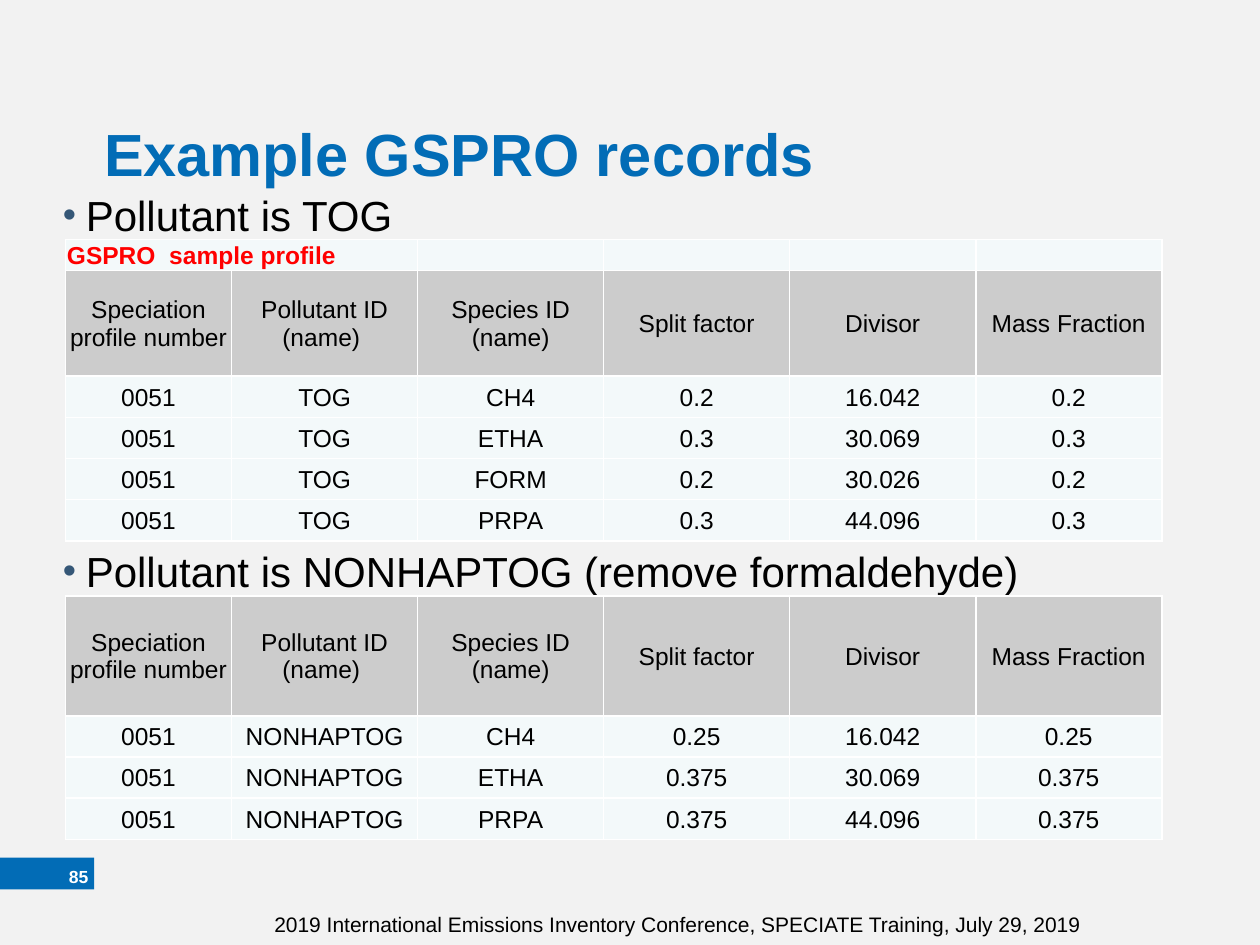
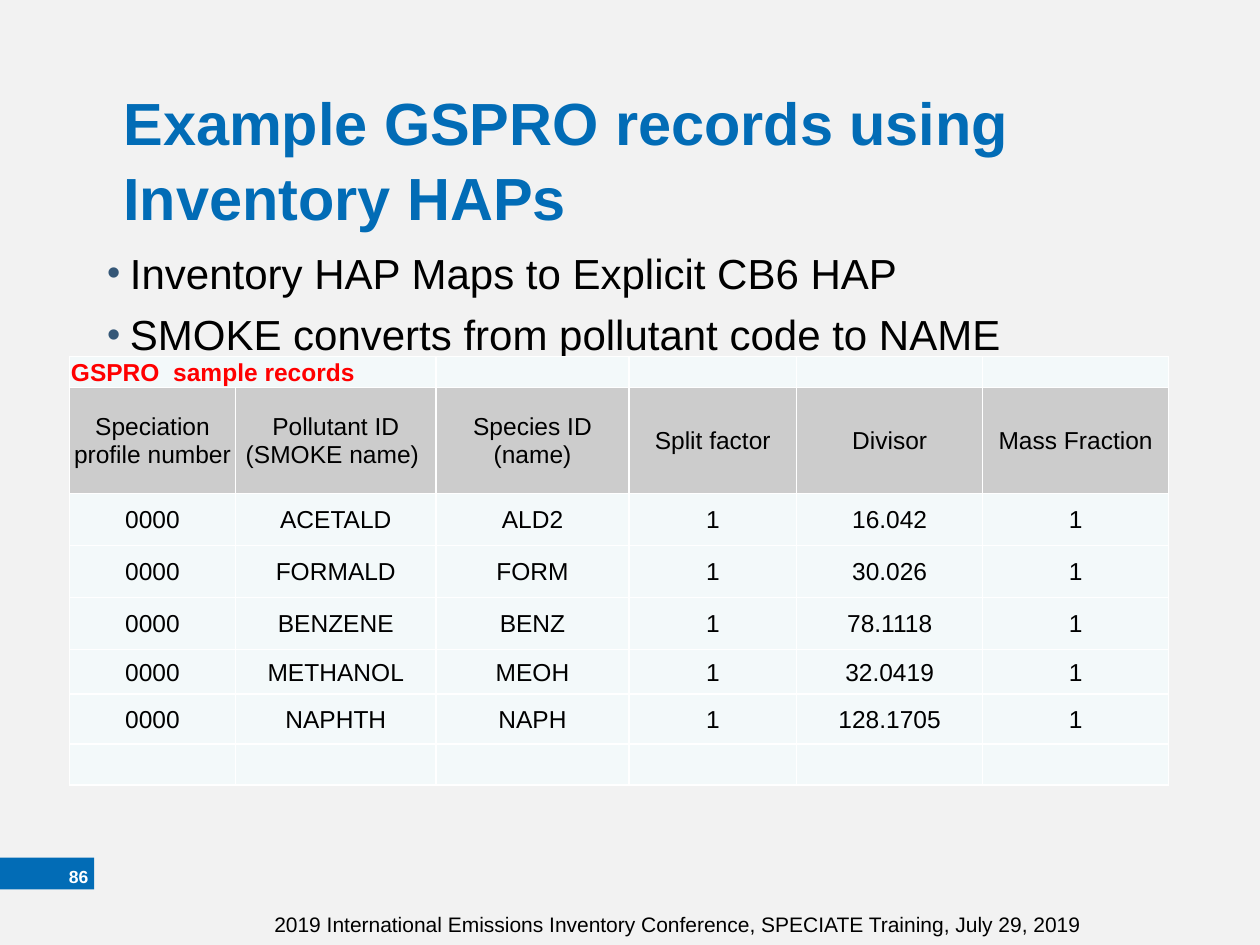
from pptx import Presentation
from pptx.dml.color import RGBColor
from pptx.enum.shapes import MSO_SHAPE as Shape
from pptx.enum.text import MSO_ANCHOR as Anchor, PP_ALIGN as Align
from pptx.oxml import parse_xml
from pptx.oxml.ns import nsdecls
from pptx.util import Cm, Pt

FONT = "Arial"
COLORS = {
    "background": "F2F2F2",
    "blue": "026CB6",
    "bullet": "355777",
    "black": "000000",
    "white": "FFFFFF",
    "red": "FF0000",
    "header": "CCCCCC",
    "body": "F3F9FA",
}
FOOTER = "2019 International Emissions Inventory Conference, SPECIATE Training, July 29, 2019"

HEADER = ["Speciation profile number", "Pollutant ID (name) ", "Species ID (name)",
          "Split factor", "Divisor", "Mass Fraction"]
SMOKE_HEADER = [HEADER[0], "Pollutant ID (SMOKE name) ", *HEADER[2:]]
EVEN_COLUMNS = [3.35] + [3.75] * 5

SLIDES = [
    {
        "number": "85",
        "title": "Example GSPRO records",
        "title_at": (1.85, 2.08),
        "bullets": ["Pollutant is TOG", "Pollutant is NONHAPTOG (remove formaldehyde)"],
        "bullets_box": (1.02, 3.61, 22.86, 12.57),
        "bullet_gap": 173,
        "tables": [
            {
                "at": (1.32, 4.83),
                "caption": "GSPRO  sample profile",
                "header": HEADER,
                "records": [
                    ["0051", "TOG", "CH4", "0.2", "16.042", "0.2"],
                    ["0051", "TOG", "ETHA", "0.3", "30.069", "0.3"],
                    ["0051", "TOG", "FORM", "0.2", "30.026", "0.2"],
                    ["0051", "TOG", "PRPA", "0.3", "44.096", "0.3"],
                ],
                "columns": EVEN_COLUMNS,
                "heights": [0.6, 2.13] + [0.83] * 4,
            },
            {
                "at": (1.32, 12.01),
                "caption": None,
                "header": HEADER,
                "records": [
                    ["0051", "NONHAPTOG", "CH4", "0.25", "16.042", "0.25"],
                    ["0051", "NONHAPTOG", "ETHA", "0.375", "30.069", "0.375"],
                    ["0051", "NONHAPTOG", "PRPA", "0.375", "44.096", "0.375"],
                ],
                "columns": EVEN_COLUMNS,
                "heights": [2.42] + [0.83] * 3,
            },
        ],
    },
    {
        "number": "86",
        "title": "Example GSPRO records using Inventory HAPs",
        "title_at": (2.24, 1.47),
        "bullets": ["Inventory HAP Maps to Explicit CB6 HAP",
                    "SMOKE converts from pollutant code to NAME"],
        "bullets_box": (1.91, 4.78, 21.59, 9.53),
        "bullet_gap": 4.8,
        "tables": [
            {
                "at": (1.4, 7.19),
                "caption": "GSPRO  sample records",
                "header": SMOKE_HEADER,
                "records": [
                    ["0000", "ACETALD", "ALD2", "1", "16.042", "1"],
                    ["0000", "FORMALD", "FORM", "1", "30.026", "1"],
                    ["0000", "BENZENE", "BENZ", "1", "78.1118", "1"],
                    ["0000", "METHANOL", "MEOH", "1", "32.0419", "1"],
                    ["0000", "NAPHTH", "NAPH", "1", "128.1705", "1"],
                    [""] * 6,
                ],
                "columns": [3.35, 4.04, 3.89, 3.38, 3.75, 3.75],
                "heights": [0.6, 2.13, 1.05, 1.05, 1.05, 0.9, 1.0, 0.83],
            },
        ],
    },
]


def color(name):
    return RGBColor.from_string(COLORS[name])


def write(paragraph, text, size=14, ink="black", bold=False, align=Align.LEFT,
          spacing=1.0, before=0, bullet=False):
    if bullet:
        properties = paragraph._p.get_or_add_pPr()
        properties.set("marL", str(Cm(0.46)))
        properties.set("indent", str(-Cm(0.46)))
        for element in (f'<a:buClr {nsdecls("a")}><a:srgbClr val="{COLORS["bullet"]}"/></a:buClr>',
                        f'<a:buSzPct {nsdecls("a")} val="90000"/>',
                        f'<a:buFont {nsdecls("a")} typeface="{FONT}"/>',
                        f'<a:buChar {nsdecls("a")} char="•"/>'):
            properties.append(parse_xml(element))
    paragraph.alignment = align
    paragraph.line_spacing = spacing
    if before:
        paragraph.space_before = Pt(before)
    if not text:
        paragraph._p.get_or_add_endParaRPr().set("sz", str(size * 100))
        return
    run = paragraph.add_run()
    run.text = text
    run.font.name = FONT
    run.font.size = Pt(size)
    run.font.bold = bold
    run.font.color.rgb = color(ink)


def add_frame(slide, box, margins=(0.25, 0.13), anchor=Anchor.TOP):
    frame = slide.shapes.add_textbox(*map(Cm, box)).text_frame
    frame.word_wrap = True
    frame.vertical_anchor = anchor
    frame.margin_left = frame.margin_right = Cm(margins[0])
    frame.margin_top = frame.margin_bottom = Cm(margins[1])
    return frame


def add_band(slide, box, fill):
    band = slide.shapes.add_shape(Shape.RECTANGLE, *map(Cm, box))
    band.shadow.inherit = False
    band.fill.solid()
    band.fill.fore_color.rgb = color(fill)
    band.line.fill.background()


def format_cell(cell, fill):
    cell.vertical_anchor = Anchor.MIDDLE
    cell.margin_left = cell.margin_right = cell.margin_top = Cm(0.03)
    cell.margin_bottom = 0
    cell.fill.solid()
    cell.fill.fore_color.rgb = color(fill)
    properties = cell._tc.get_or_add_tcPr()
    for position, side in enumerate("LRTB"):
        properties.insert(position, parse_xml(
            f'<a:ln{side} {nsdecls("a")} w="{Pt(1)}"><a:solidFill>'
            f'<a:srgbClr val="{COLORS["white"]}"/></a:solidFill></a:ln{side}>'))


def add_records(slide, data):
    columns, heights, caption = data["columns"], data["heights"], data["caption"]
    rows = [data["header"], *data["records"]]
    if caption:
        rows.insert(0, [caption] + [""] * (len(columns) - 1))
    box = (*data["at"], sum(columns), sum(heights))
    table = slide.shapes.add_table(len(rows), len(columns), *map(Cm, box)).table
    table.first_row = table.horz_banding = False
    for column, width in zip(table.columns, columns):
        column.width = Cm(width)
    for row, height in zip(table.rows, heights):
        row.height = Cm(height)
    for row, texts in zip(table.rows, rows):
        for cell, text in zip(row.cells, texts):
            format_cell(cell, "header" if texts is data["header"] else "body")
            style = {"ink": "red", "bold": True} if caption and text == caption else {"align": Align.CENTER}
            write(cell.text_frame.paragraphs[0], text, **style)
    if caption:
        table.cell(0, 0).merge(table.cell(0, 1))


def build_slide(presentation, content):
    slide = presentation.slides.add_slide(presentation.slide_layouts[6])
    add_band(slide, (0, 0, 25.4, 19.05), "background")
    add_band(slide, (0, 17.29, 1.9, 0.64), "blue")

    title = add_frame(slide, (*content["title_at"], 21.16, 2.74), margins=(0.25, 0.2))
    write(title.paragraphs[0], content["title"], size=34, ink="blue", bold=True, spacing=1.05)

    body = add_frame(slide, content["bullets_box"], margins=(0.25, 0.16))
    for index, text in enumerate(content["bullets"]):
        paragraph = body.add_paragraph() if index else body.paragraphs[0]
        write(paragraph, text, size=24, spacing=1.05, bullet=True,
              before=content["bullet_gap"] if index else 0)

    footer = add_frame(slide, (5.28, 18.24, 17.15, 0.8))
    write(footer.paragraphs[0], FOOTER, size=12)
    number = add_frame(slide, (0.08, 17.35, 1.7, 0.64), margins=(0, 0), anchor=Anchor.MIDDLE)
    write(number.paragraphs[0], content["number"], size=10, ink="white", bold=True, align=Align.RIGHT)

    for data in content["tables"]:
        add_records(slide, data)


def main():
    presentation = Presentation()
    presentation.slide_width, presentation.slide_height = Cm(25.4), Cm(19.05)
    for content in SLIDES:
        build_slide(presentation, content)
    presentation.save("out.pptx")


if __name__ == "__main__":
    main()
